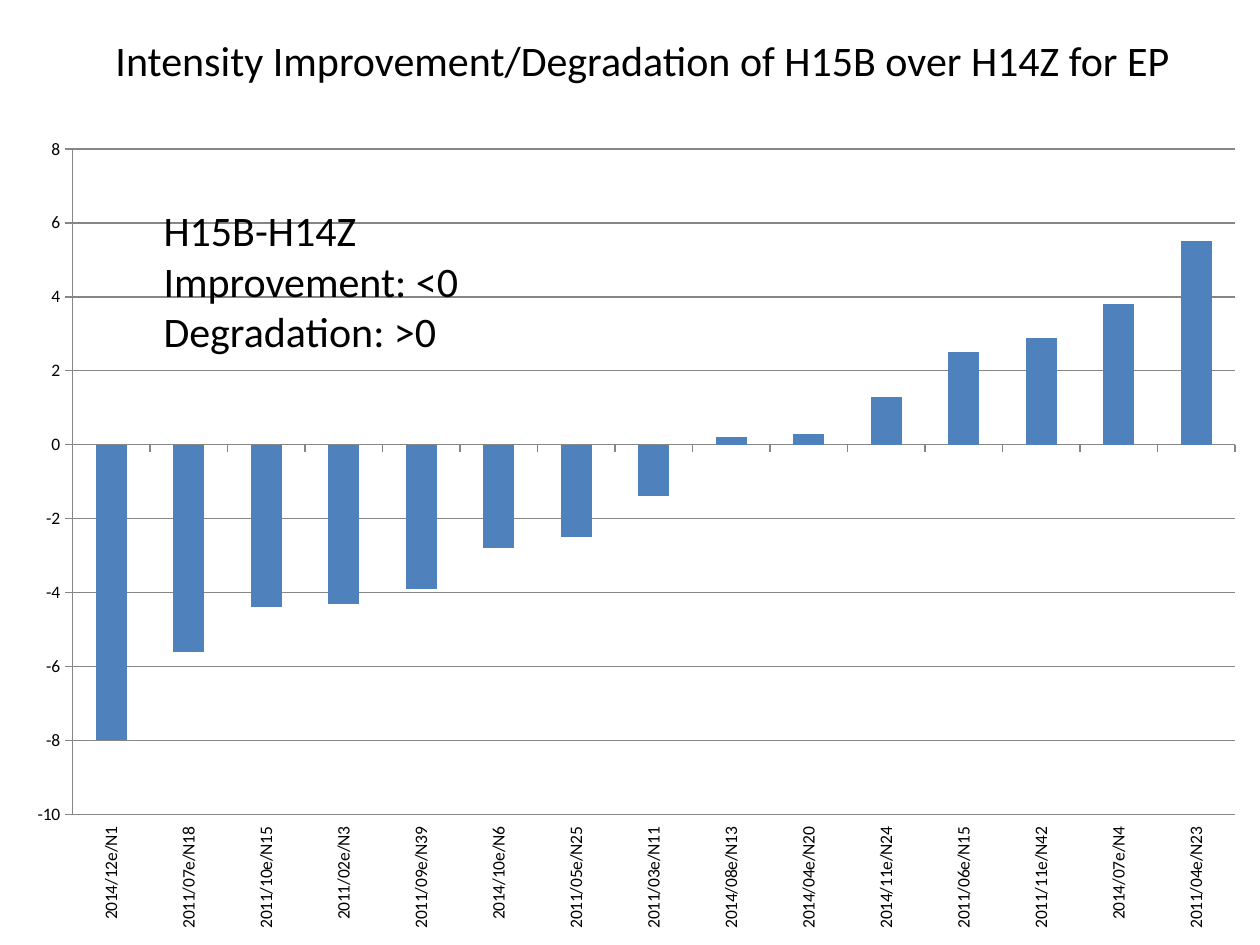
from dataclasses import dataclass

from pptx import Presentation
from pptx.chart.data import CategoryChartData
from pptx.dml.color import RGBColor
from pptx.enum.chart import XL_CHART_TYPE as ChartType
from pptx.enum.chart import XL_TICK_LABEL_POSITION as LabelPosition
from pptx.enum.chart import XL_TICK_MARK as TickMark
from pptx.enum.text import MSO_ANCHOR as Anchor
from pptx.enum.text import PP_ALIGN as Align
from pptx.util import Inches, Pt

WIDTH, HEIGHT = 10, 7.5
TITLE_ONLY = 5

INTENSITY_CHANGE = {
    "2014/12e/N1": -8,
    "2011/07e/N18": -5.6,
    "2011/10e/N15": -4.4,
    "2011/02e/N3": -4.3,
    "2011/09e/N39": -3.9,
    "2014/10e/N6": -2.8,
    "2011/05e/N25": -2.5,
    "2011/03e/N11": -1.4,
    "2014/08e/N13": 0.2,
    "2014/04e/N20": 0.3,
    "2014/11e/N24": 1.3,
    "2011/06e/N15": 2.5,
    "2011/11e/N42": 2.9,
    "2014/07e/N4": 3.8,
    "2011/04e/N23": 5.5,
}


def color(code):
    return RGBColor.from_string(code)


def place(left, top, width, height):
    """Turn shares of the slide's size into lengths."""
    return (Inches(left * WIDTH), Inches(top * HEIGHT),
            Inches(width * WIDTH), Inches(height * HEIGHT))


@dataclass
class SlideBuilder:
    page: object
    font: str = "Calibri"
    ink: str = "000000"
    bar: str = "4F81BD"
    grid: str = "868686"
    text_size: int = 24
    label_size: int = 10

    def style_font(self, font, size):
        font.name = self.font
        font.size = Pt(size)
        font.color.rgb = color(self.ink)

    def fill_text(self, frame, text, align):
        frame.text = text
        frame.word_wrap = True
        for para in frame.paragraphs:
            para.alignment = align
            for span in para.runs:
                self.style_font(span.font, self.text_size)

    def title(self, text, *area):
        box = self.page.shapes.title
        box.left, box.top, box.width, box.height = place(*area)
        self.fill_text(box.text_frame, text, Align.CENTER)
        box.text_frame.vertical_anchor = Anchor.TOP

    def note(self, lines, *area):
        box = self.page.shapes.add_textbox(*place(*area))
        self.fill_text(box.text_frame, "\n".join(lines), Align.LEFT)

    def column_chart(self, values, *area):
        data = CategoryChartData()
        data.categories = list(values)
        data.add_series("Series 1", list(values.values()))
        chart = self.page.shapes.add_chart(
            ChartType.COLUMN_CLUSTERED, *place(*area), data).chart
        chart.has_legend = False
        chart.has_title = False
        self.style_font(chart.font, self.label_size)

        plot = chart.plots[0]
        plot.vary_by_categories = False
        plot.gap_width = 150
        fill = plot.series[0].format.fill
        fill.solid()
        fill.fore_color.rgb = color(self.bar)
        plot.series[0].invert_if_negative = False

        value_axis, category_axis = chart.value_axis, chart.category_axis
        value_axis.minimum_scale, value_axis.maximum_scale = -10, 8
        value_axis.major_unit = 2
        value_axis.has_major_gridlines = True
        category_axis.tick_label_position = LabelPosition.LOW
        for axis in (value_axis, category_axis):
            axis.major_tick_mark = TickMark.OUTSIDE
            self.style_font(axis.tick_labels.font, self.label_size)
            self.thin_line(axis.format.line)
        self.thin_line(value_axis.major_gridlines.format.line)
        label_body = category_axis._element.find(".//{*}txPr/{*}bodyPr")
        label_body.set("rot", "-5400000")
        label_body.set("vert", "horz")

    def thin_line(self, line):
        line.color.rgb = color(self.grid)
        line.width = Pt(0.75)


def main():
    deck = Presentation()
    deck.slide_width, deck.slide_height = Inches(WIDTH), Inches(HEIGHT)
    slide = SlideBuilder(deck.slides.add_slide(deck.slide_layouts[TITLE_ONLY]))
    slide.column_chart(INTENSITY_CHANGE, 0.01, 0.13, 0.99, 0.87)
    slide.title("Intensity Improvement/Degradation of H15B over H14Z for EP",
                0.06, 0.03, 0.9, 0.07)
    slide.note(["H15B-H14Z", "Improvement: <0", "Degradation: >0"],
               0.12, 0.21, 0.3, 0.21)
    deck.save("out.pptx")


if __name__ == "__main__":
    main()
